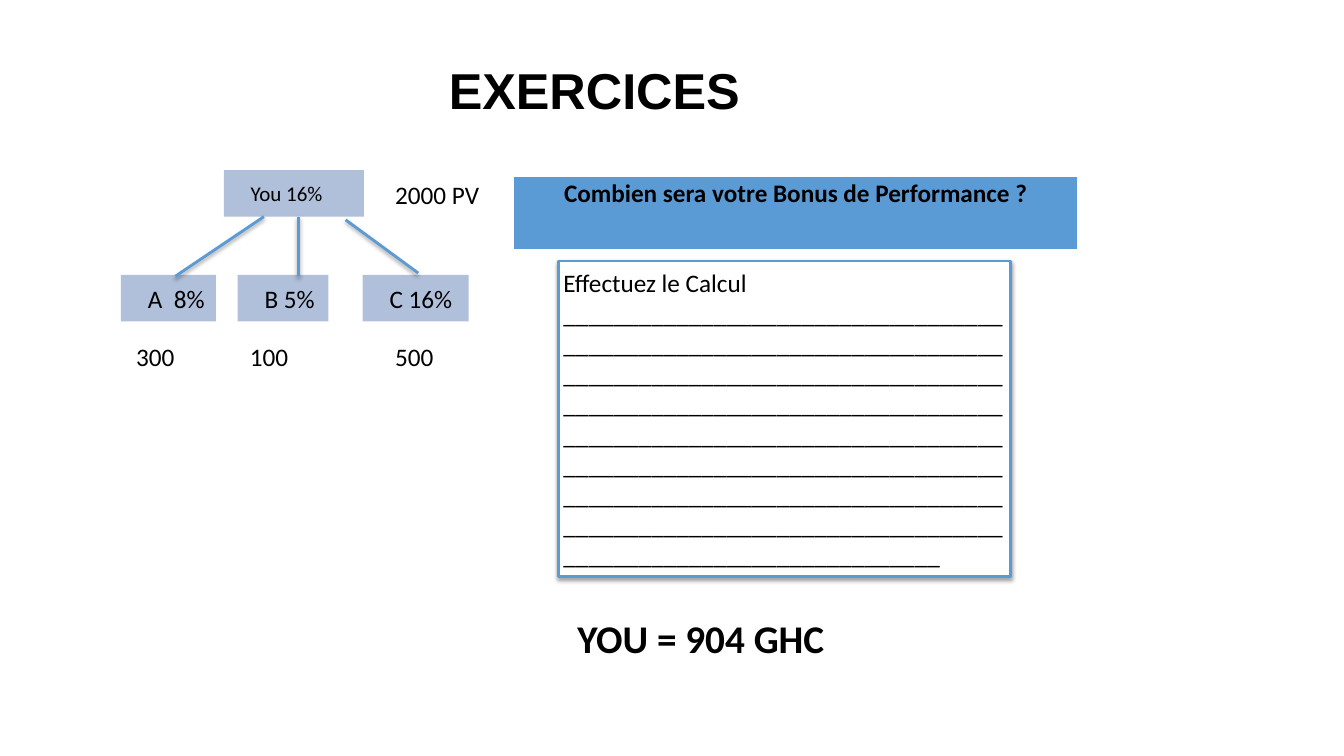
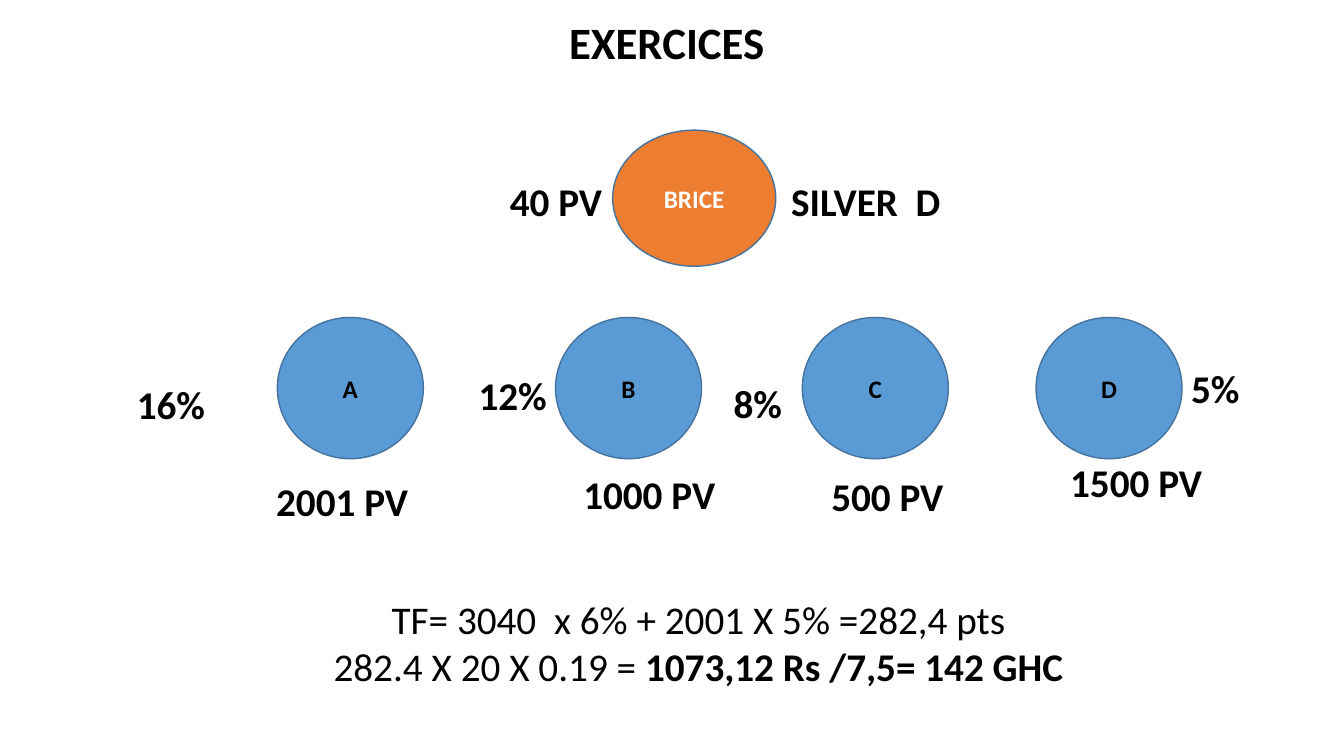
import dataclasses
import typing

import lxml.etree
import pptx
import pptx.dml.color
import pptx.enum.shapes
import pptx.enum.text
import pptx.oxml.ns
import pptx.util

Cm = pptx.util.Cm
Pt = pptx.util.Pt
Shapes = pptx.enum.shapes.MSO_SHAPE
Align = pptx.enum.text.PP_ALIGN
Anchor = pptx.enum.text.MSO_ANCHOR

# Shared style
COLORS = {
    "text": "000000",
    "white": "FFFFFF",
    "node": "B1C0DA",
    "blue": "5B9BD5",
    "orange": "ED7D31",
    "outline": "43739E",
}
FONT = "Calibri"
TITLE = "EXERCICES"
INSET = 0.13
Box = tuple[float, float, float, float]


@dataclasses.dataclass
class Node:
    text: str
    box: Box
    size: int = 18


@dataclasses.dataclass
class Label:
    text: str
    x: float
    y: float
    width: float = 6.0


@dataclasses.dataclass
class Leg:
    name: str
    x: float
    rate: Label
    points: Label


def rgb(name: str) -> pptx.dml.color.RGBColor:
    return pptx.dml.color.RGBColor.from_string(COLORS[name])


def write(p, text: str, *, size: int = 18, bold: bool = False, color: str = "text",
          font: str = FONT, align=Align.LEFT, spacing: float = 1.0) -> None:
    """Append one formatted run to a paragraph."""
    p.alignment = align
    p.line_spacing = spacing
    r = p.add_run()
    r.text = text
    r.font.name = font
    r.font.size = Pt(size)
    r.font.bold = bold
    r.font.color.rgb = rgb(color)


def set_frame(tf, anchor=Anchor.TOP, inset: float = INSET, left: float | None = None) -> None:
    tf.word_wrap = True
    tf.auto_size = pptx.enum.text.MSO_AUTO_SIZE.NONE
    tf.vertical_anchor = anchor
    tf.margin_left = Cm(inset if left is None else left)
    tf.margin_right = Cm(inset)
    tf.margin_top = tf.margin_bottom = Cm(INSET)


def add_title(slide, box: Box, **fmt: typing.Any) -> None:
    sp = slide.shapes.title
    sp.left, sp.top, sp.width, sp.height = map(Cm, box)
    set_frame(sp.text_frame, Anchor.MIDDLE)
    write(sp.text_frame.paragraphs[0], TITLE, bold=True, align=Align.CENTER, **fmt)


def add_text_box(slide, box: Box, inset: float = INSET):
    tf = slide.shapes.add_textbox(*map(Cm, box)).text_frame
    set_frame(tf, inset=inset)
    return tf


def add_label(slide, label: Label, inset: float = 0.25, **fmt: typing.Any) -> None:
    tf = add_text_box(slide, (label.x, label.y, label.width, 1.45), inset)
    write(tf.paragraphs[0], label.text, **fmt)


def add_block(slide, kind, box: Box, fill: str, line: str | None = None, weight: float = 1):
    sp = slide.shapes.add_shape(kind, *map(Cm, box))
    sp.shadow.inherit = False
    sp.fill.solid()
    sp.fill.fore_color.rgb = rgb(fill)
    if line is None:
        sp.line.fill.background()
    else:
        sp.line.color.rgb = rgb(line)
        sp.line.width = Pt(weight)
    return sp


def add_shadow(sp) -> None:
    """Give a shape or connector a soft shadow straight below it."""
    qn = pptx.oxml.ns.qn
    props = sp._element.spPr
    effects = props.find(qn("a:effectLst"))
    if effects is None:
        effects = lxml.etree.SubElement(props, qn("a:effectLst"))
    shadow = lxml.etree.SubElement(
        effects, qn("a:outerShdw"), blurRad=str(Pt(3)), dist=str(Pt(1.7)),
        dir="5400000", rotWithShape="0")
    color = lxml.etree.SubElement(shadow, qn("a:srgbClr"), val=COLORS["text"])
    lxml.etree.SubElement(color, qn("a:alpha"), val="36000")


def add_circle(slide, box: Box, text: str, fill: str, color: str = "text") -> None:
    sp = add_block(slide, Shapes.OVAL, box, fill, "outline")
    set_frame(sp.text_frame, Anchor.MIDDLE, 0.25)
    write(sp.text_frame.paragraphs[0], text, bold=True, color=color, align=Align.CENTER)


# Slide 1: performance bonus
NODES = [
    Node("You 16%", (5.64, 4.29, 3.53, 1.17), 15),
    Node("A  8%", (3.05, 6.93, 2.39, 1.17)),
    Node("B 5%", (5.99, 6.93, 2.29, 1.17)),
    Node("C 16%", (9.14, 6.93, 2.67, 1.17)),
]
BRANCHES: list[Box] = [
    (4.42, 6.96, 6.65, 5.46),
    (8.71, 5.54, 10.54, 6.88),
    (7.52, 6.96, 7.52, 5.46),
]
NODE_POINTS = [
    Label("2000 PV", 9.83, 4.39, 2.8),
    Label("300", 3.3, 8.46, 2),
    Label("100", 6.17, 8.46, 2),
    Label("500", 9.83, 8.46, 2),
]


def build_bonus_slide(slide) -> None:
    add_title(slide, (3.23, 1.35, 23.5, 1.8), size=36, font="Arial")

    # Tree of members
    for node in NODES:
        sp = add_block(slide, Shapes.RECTANGLE, node.box, "node")
        set_frame(sp.text_frame, Anchor.MIDDLE, 0, left=0.68)
        write(sp.text_frame.paragraphs[0], node.text, size=node.size)
    for label in NODE_POINTS:
        add_label(slide, label, INSET)
    for branch in BRANCHES:
        cx = slide.shapes.add_connector(
            pptx.enum.shapes.MSO_CONNECTOR.STRAIGHT, *map(Cm, branch))
        cx.line.color.rgb = rgb("blue")
        cx.line.width = Pt(2)
        add_shadow(cx)

    # Question, working space and answer
    sp = add_block(slide, Shapes.RECTANGLE, (12.93, 4.42, 14.25, 1.88), "blue", "white", 2)
    set_frame(sp.text_frame)
    write(sp.text_frame.paragraphs[0], "Combien sera votre Bonus de Performance ?",
          bold=True, align=Align.CENTER, spacing=0.9)

    sp = add_block(slide, Shapes.RECTANGLE, (14.07, 6.58, 11.4, 7.95), "white", "blue", 2)
    add_shadow(sp)
    set_frame(sp.text_frame, Anchor.MIDDLE)
    write(sp.text_frame.paragraphs[0], "Effectuez le Calcul " + "_" * 310)

    add_label(slide, Label("YOU = 904 GHC", 14.3, 15.34, 17.8), size=28, bold=True)


# Slide 2: silver director
LEADER_LABELS = [
    Label("40 PV", 12.6, 4.34),
    Label("SILVER  D", 19.69, 4.34),
]
LEGS = [
    Leg("A", 6.99, Label("16%", 3.2, 9.45, 3), Label("2001 PV", 6.71, 11.91)),
    Leg("B", 14.0, Label("12%", 11.81, 9.22, 3), Label("1000 PV", 14.45, 11.73)),
    Leg("C", 20.22, Label("8%", 18.24, 9.42, 3), Label("500 PV", 20.7, 11.76)),
    Leg("D", 26.11, Label("5%", 29.77, 9.04, 3), Label("1500 PV", 26.72, 11.43)),
]


def build_silver_slide(slide) -> None:
    add_title(slide, (5.03, 0.23, 23.55, 1.63), size=32)

    # Leader and legs
    add_circle(slide, (15.44, 3.28, 4.11, 3.43), "BRICE", "orange", "white")
    labels = list(LEADER_LABELS)
    for leg in LEGS:
        add_circle(slide, (leg.x, 8, 3.68, 3.56), leg.name, "blue")
        labels += [leg.rate, leg.points]
    for label in labels:
        add_label(slide, label, size=28, bold=True)

    # Calculation
    tf = add_text_box(slide, (6.35, 14.86, 22.5, 2.64), 0.25)
    write(tf.paragraphs[0], "TF= 3040  x 6% + 2001 X 5% =282,4 pts",
          size=28, align=Align.CENTER)
    p = tf.add_paragraph()
    write(p, "282.4 X 20 X 0.19 = ", size=28, align=Align.CENTER)
    write(p, "1073,12 Rs /7,5= 142 GHC", size=28, bold=True, align=Align.CENTER)


def main() -> None:
    prs = pptx.Presentation()
    prs.slide_width, prs.slide_height = Cm(33.87), Cm(19.05)
    title_only = prs.slide_layouts[5]
    for build in (build_bonus_slide, build_silver_slide):
        build(prs.slides.add_slide(title_only))
    prs.save("out.pptx")


if __name__ == "__main__":
    main()
